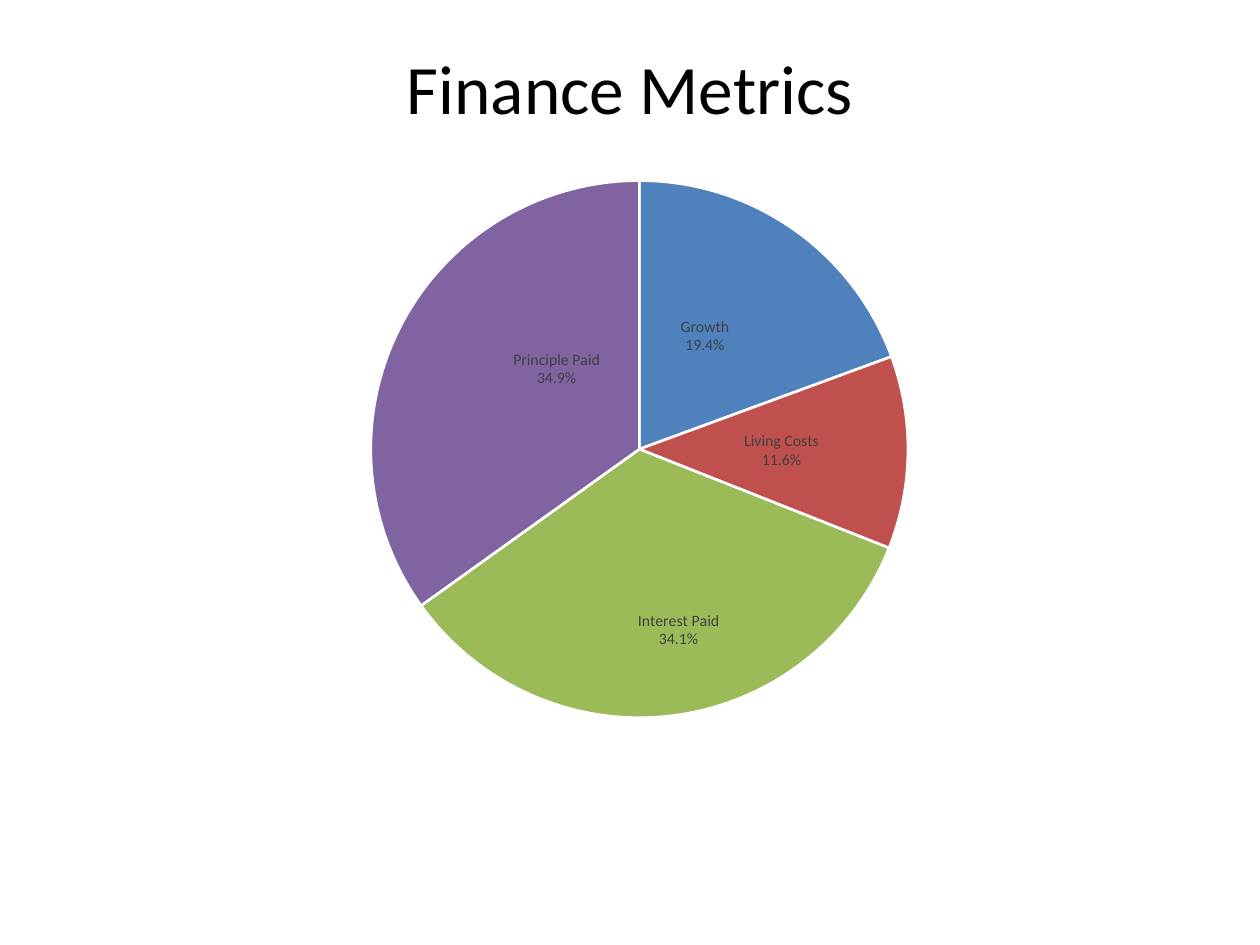
from typing import NamedTuple

from lxml.etree import SubElement
from pptx import Presentation
from pptx.chart.data import CategoryChartData as ChartData
from pptx.chart.point import Point
from pptx.chart.series import PieSeries
from pptx.dml.color import RGBColor
from pptx.enum.chart import XL_CHART_TYPE as Kind, XL_LABEL_POSITION as Spot
from pptx.enum.text import MSO_ANCHOR as Anchor, PP_ALIGN as Align
from pptx.oxml import parse_xml
from pptx.oxml.ns import nsdecls, qn
from pptx.util import Pt

FONT = "Calibri"
BLACK = RGBColor(0x00, 0x00, 0x00)
WHITE = RGBColor(0xFF, 0xFF, 0xFF)
GREY = RGBColor(0x40, 0x40, 0x40)
BLUE = RGBColor(0x4F, 0x81, 0xBD)
RED = RGBColor(0xC0, 0x50, 0x4D)
GREEN = RGBColor(0x9B, 0xBB, 0x59)
PURPLE = RGBColor(0x80, 0x64, 0xA2)

WIDE, HIGH = Pt(648), Pt(362.9)  # chart frame
SIDE = Pt(307)  # pie diameter
PERCENT = "0.0%"


class Slice(NamedTuple):
    name: str
    share: float
    color: RGBColor
    dx: float  # label shift in points
    dy: float


SLICES = [
    Slice("Growth", 19.4, BLUE, -6.5, -1.5),
    Slice("Living Costs", 11.6, RED, 4.5, 0),
    Slice("Interest Paid", 34.1, GREEN, 13, 27.5),
    Slice("Principle Paid", 34.9, PURPLE, 21, -10.5),
]


def layout(**parts: object):
    """Make a manual chart layout from its settings, in schema order."""
    root = parse_xml(f"<c:layout {nsdecls('c')}><c:manualLayout/></c:layout>")
    for name, val in parts.items():
        SubElement(root[0], qn(f"c:{name}")).set("val", str(val))
    return root


def add_title(slide, text: str) -> None:
    frame = slide.shapes.add_textbox(Pt(36), Pt(22), Pt(648), Pt(55.4)).text_frame
    frame.word_wrap = True
    frame.vertical_anchor = Anchor.MIDDLE
    para = frame.paragraphs[0]
    para.alignment = Align.CENTER
    run = para.add_run()
    run.text = text
    run.font.name = FONT
    run.font.size = Pt(39.6)
    run.font.color.rgb = BLACK


def add_label(series: PieSeries, point: Point, idx: int, part: Slice) -> None:
    """Show name and percentage on two lines, shifted from the slice's middle."""
    label = point.data_label
    label.font.name = FONT
    label.font.size = Pt(9)
    label.font.color.rgb = GREY
    label.position = Spot.CENTER
    node = series.data_labels._element.find(f"{qn('c:dLbl')}[{idx + 1}]")
    node.insert(1, layout(x=Pt(part.dx) / WIDE, y=Pt(part.dy) / HIGH))
    node.insert(2, parse_xml(
        f'<c:numFmt {nsdecls("c")} formatCode="{PERCENT}" sourceLinked="0"/>'))
    for flag, val in (("Val", 0), ("CatName", 1), ("Percent", 1)):
        node.find(qn(f"c:show{flag}")).set("val", str(val))
    SubElement(node, qn("c:separator")).text = "\n"


def add_pie(slide, parts: list[Slice]) -> None:
    data = ChartData(number_format="0.0")
    data.categories = [part.name for part in parts]
    data.add_series("Series 1", [part.share for part in parts])
    chart = slide.shapes.add_chart(
        Kind.PIE, Pt(42.5), Pt(82.8), WIDE, HIGH, data).chart
    chart.has_title = False
    chart.has_legend = False
    chart.font.name = FONT
    chart.font.size = Pt(10)
    chart.font.color.rgb = BLACK
    plot = chart.plots[0]
    plot.vary_by_categories = True
    area = chart._chartSpace.chart.plotArea
    for old in area.findall(qn("c:layout")):
        area.remove(old)
    area.insert(0, layout(layoutTarget="inner", xMode="edge", yMode="edge",
                          x=Pt(169.4) / WIDE, y=Pt(20.4) / HIGH,
                          w=SIDE / WIDE, h=SIDE / HIGH))
    series = plot.series[0]
    labels = series.data_labels
    labels.number_format = PERCENT
    labels.number_format_is_linked = False
    labels.show_value = False
    labels.show_category_name = True
    labels.show_percentage = True
    labels.font.name = FONT
    labels.font.size = Pt(9)
    labels.font.color.rgb = GREY
    for idx, part in enumerate(parts):
        point = series.points[idx]
        point.format.fill.solid()
        point.format.fill.fore_color.rgb = part.color
        point.format.line.color.rgb = WHITE
        point.format.line.width = Pt(1.5)
        add_label(series, point, idx, part)


def main() -> None:
    deck = Presentation()
    deck.slide_width, deck.slide_height = Pt(720), Pt(540)
    slide = deck.slides.add_slide(deck.slide_layouts[6])
    add_title(slide, "Finance Metrics")
    add_pie(slide, SLICES)
    deck.save("out.pptx")


if __name__ == "__main__":
    main()
